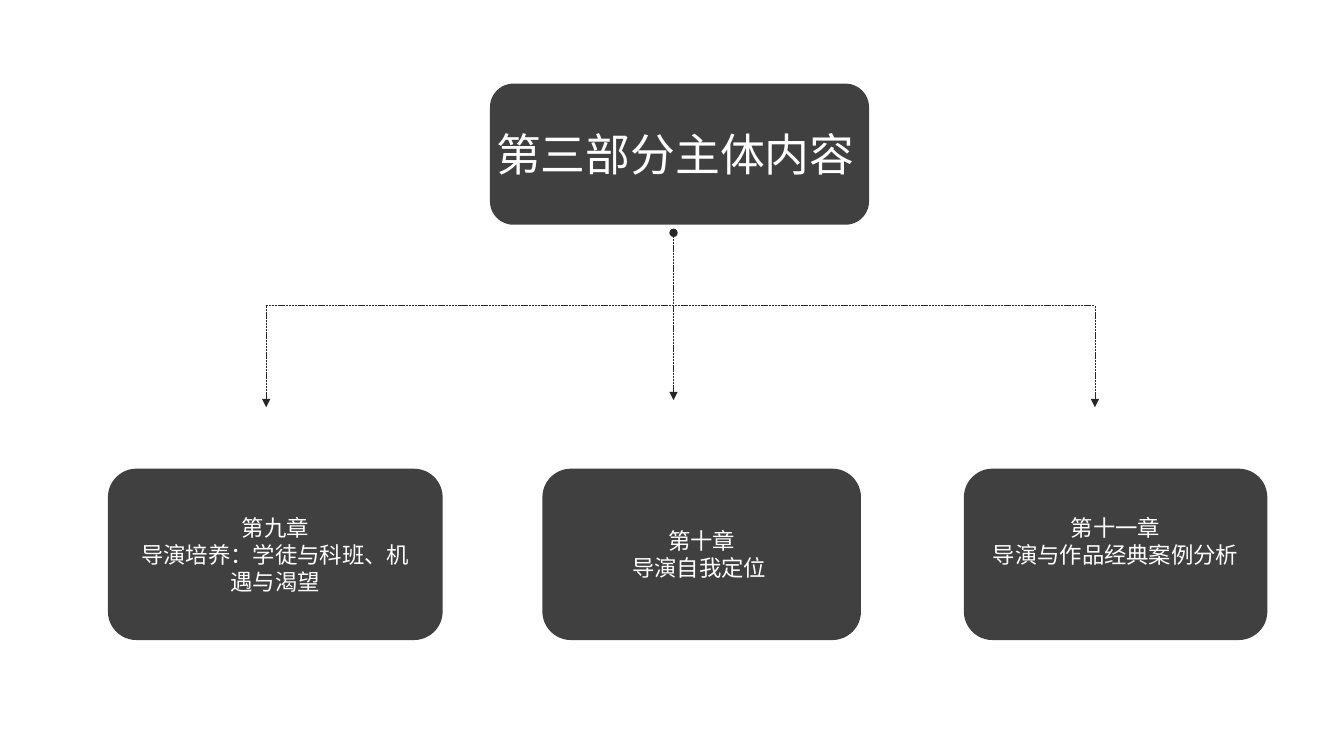
from typing import NamedTuple

from lxml import etree
from pptx import Presentation
from pptx.dml.color import RGBColor
from pptx.enum.dml import MSO_LINE
from pptx.enum.shapes import MSO_CONNECTOR, MSO_SHAPE
from pptx.enum.text import PP_ALIGN
from pptx.oxml.ns import qn
from pptx.slide import Slide
from pptx.util import Inches, Pt

ROUNDED = MSO_SHAPE.ROUNDED_RECTANGLE
STRAIGHT = MSO_CONNECTOR.STRAIGHT
CENTER = PP_ALIGN.CENTER
DASH = MSO_LINE.SQUARE_DOT

CARD_GRAY = RGBColor(0x40, 0x40, 0x40)
LINE_GRAY = RGBColor(0x26, 0x26, 0x26)
WHITE = RGBColor(0xFF, 0xFF, 0xFF)

FONT = "Arial"
CHAPTER_TOP = 4.65
CHAPTER_HEIGHT = 1.7
BRANCH_Y = 3.03
BRANCH_LEFT = 2.64
BRANCH_RIGHT = 10.86
TRUNK_X = 6.68
ARROW_Y = 4.04


class Area(NamedTuple):
    left: float
    top: float
    width: float
    height: float


class Card(NamedTuple):
    panel: Area
    caption: Area
    lines: tuple[str, ...]
    size: int = 16


class Link(NamedTuple):
    start: tuple[float, float]
    end: tuple[float, float]
    head: str = ""
    tail: str = ""


def chapter_card(left: float, width: float, caption: Area, *lines: str) -> Card:
    return Card(Area(left, CHAPTER_TOP, width, CHAPTER_HEIGHT), caption, lines)


CARDS = [
    chapter_card(5.38, 3.16, Area(5.88, 5.18, 2.16, 0.64), "第十章", "导演自我定位 "),
    Card(Area(4.86, 0.83, 3.76, 1.4), Area(4.78, 1.21, 3.84, 0.64), ("第三部分主体内容 ",), 32),
    chapter_card(1.07, 3.32, Area(1.22, 5.05, 3.02, 0.91), "第九章", "导演培养：学徒与科班、机遇与渴望"),
    chapter_card(9.56, 3.01, Area(9.69, 5.05, 2.75, 0.64), "第十一章", "导演与作品经典案例分析"),
]

LINKS = [
    Link((BRANCH_LEFT, BRANCH_Y), (BRANCH_RIGHT, BRANCH_Y)),
    Link((TRUNK_X, 3.97), (TRUNK_X, 2.31), "triangle", "oval"),
    Link((BRANCH_LEFT, ARROW_Y), (BRANCH_LEFT, BRANCH_Y), "triangle"),
    Link((BRANCH_RIGHT, ARROW_Y), (BRANCH_RIGHT, BRANCH_Y), "triangle"),
]


def draw_card(slide: Slide, card: Card) -> None:
    panel = slide.shapes.add_shape(ROUNDED, *map(Inches, card.panel))
    panel.shadow.inherit = False
    panel.fill.solid()
    panel.fill.fore_color.rgb = CARD_GRAY
    panel.line.fill.background()

    caption = slide.shapes.add_textbox(*map(Inches, card.caption)).text_frame
    caption.word_wrap = True
    caption.text = "\n".join(card.lines)
    for paragraph in caption.paragraphs:
        paragraph.alignment = CENTER
        paragraph.font.name = FONT
        paragraph.font.size = Pt(card.size)
        paragraph.font.color.rgb = WHITE


def draw_link(slide: Slide, link: Link) -> None:
    connector = slide.shapes.add_connector(STRAIGHT, *map(Inches, link.start + link.end))
    connector.line.color.rgb = LINE_GRAY
    connector.line.width = Pt(0.5)
    connector.line.dash_style = DASH
    outline = connector.line._get_or_add_ln()
    for tag, kind in (("a:headEnd", link.head), ("a:tailEnd", link.tail)):
        if kind:
            etree.SubElement(outline, qn(tag), type=kind)
    etree.SubElement(connector._element.spPr, qn("a:effectLst"))


def main() -> None:
    presentation = Presentation()
    presentation.slide_width = Inches(13.33)
    presentation.slide_height = Inches(7.5)
    slide = presentation.slides.add_slide(presentation.slide_layouts[6])
    for card in CARDS:
        draw_card(slide, card)
    for link in LINKS:
        draw_link(slide, link)
    presentation.save("out.pptx")


if __name__ == "__main__":
    main()
